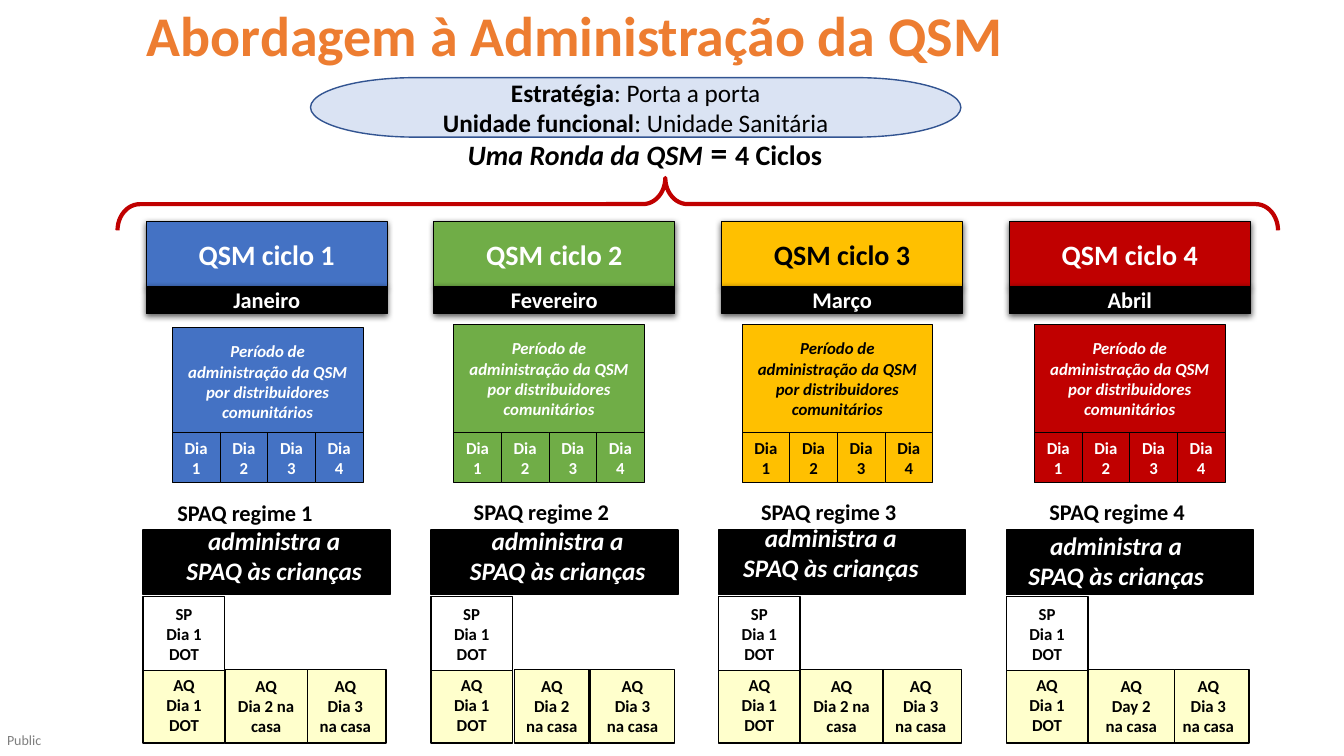
from lxml import etree
from pptx import Presentation
from pptx.dml.color import RGBColor
from pptx.enum.shapes import MSO_SHAPE
from pptx.enum.text import MSO_ANCHOR, PP_ALIGN
from pptx.oxml.ns import qn
from pptx.util import Inches, Pt

RECT, BRACE, TERMINATOR = (
    MSO_SHAPE.RECTANGLE, MSO_SHAPE.LEFT_BRACE, MSO_SHAPE.FLOWCHART_TERMINATOR)
TOP, MIDDLE = MSO_ANCHOR.TOP, MSO_ANCHOR.MIDDLE
LEFT, CENTER = PP_ALIGN.LEFT, PP_ALIGN.CENTER

THEME = {
    "font": "Calibri",
    "color": {"black": "000000", "white": "FFFFFF", "orange": "ED7D31",
              "blue": "4472C4", "green": "70AD47", "gold": "FFC000",
              "red": "C00000", "cream": "FFFFCC", "pale": "DAE3F3",
              "navy": "325491", "gray": "7F7F7F"},
    "size": {"title": 40, "equals": 24, "cycle": 20, "strategy": 18,
             "month": 16, "cell": 12, "label": 10},
}

# Content
TITLE = "Abordagem à Administração da QSM"
STRATEGY = [("Estratégia", ": Porta a porta"),
            ("Unidade funcional", ": Unidade Sanitária")]
PERIOD = "Período de administração da QSM por distribuidores comunitários"
DAYS = ["Dia 1", "Dia 2", "Dia 3", "Dia 4"]
GIVES = "administra a SPAQ às crianças"
SP_DOSE = ["SP", "Dia 1", "DOT"]
AQ_FIRST = ["AQ", "Dia 1", "DOT"]
AQ_SECOND = ["AQ", "Dia 2 na casa"]
AQ_SECOND_SPLIT = ["AQ", "Day 2", "na casa"]
AQ_THIRD = ["AQ", "Dia 3", "na casa"]

# Second and third are the (offset, width) of the AQ boxes in their column
USUAL_SECOND, USUAL_THIRD = (0.81, 0.82), (1.6, 0.81)
CYCLES = [
    dict(month="Janeiro", fill="blue", ink="white", period=(1.71, 3.25),
         regime=(1.66, 4.9), gives=(1.71, 5.16), dose=AQ_SECOND,
         second=USUAL_SECOND, third=USUAL_THIRD),
    dict(month="Fevereiro", fill="green", ink="white", period=(4.5, 3.22),
         regime=(4.6, 4.89), gives=(4.52, 5.16), dose=AQ_SECOND,
         second=(0.83, 0.74), third=(1.58, 0.84)),
    dict(month="Março", fill="gold", ink="black", period=(7.36, 3.22),
         regime=(7.45, 4.89), gives=(7.23, 5.13), dose=AQ_SECOND,
         second=USUAL_SECOND, third=USUAL_THIRD),
    dict(month="Abril", fill="red", ink="white", period=(10.26, 3.22),
         regime=(10.31, 4.89), gives=(10.06, 5.21), dose=AQ_SECOND_SPLIT,
         second=(0.81, 0.86), third=USUAL_THIRD),
]

# Column grid
FIRST_LEFT, COLUMN_STEP = 1.42, 8.56 / 3
HEAD_INSET, HEAD_WIDTH = 0.03, 2.39
PERIOD_WIDTH, DAY_TOP = 1.89, 4.29
DOSE_WIDTH, DOSE_HEIGHT, SP_TOP, AQ_TOP = 0.81, 0.73, 5.92, 6.64

deck = Presentation()
deck.slide_width, deck.slide_height = Inches(13.33), Inches(7.5)
page = deck.slides.add_slide(deck.slide_layouts[6])


def color(name):
    return RGBColor.from_string(THEME["color"][name])


def write(box, lines, size, ink, align=CENTER, anchor=MIDDLE, **base):
    """Each line is a string or a list of (text, format) spans."""
    frame = box.text_frame
    frame.word_wrap, frame.vertical_anchor = True, anchor
    for number, line in enumerate(lines):
        para = frame.paragraphs[0] if number == 0 else frame.add_paragraph()
        para.alignment = align
        for text, changes in [(line, {})] if isinstance(line, str) else line:
            span = para.add_run()
            span.text = text
            values = {"name": THEME["font"], "size": size, "bold": True,
                      **base, **changes}
            values["size"] = Pt(THEME["size"][values["size"]])
            for key, value in values.items():
                setattr(span.font, key, value)
            span.font.color.rgb = color(ink)


def add_box(at, fill, line="black", weight=1, kind=RECT):
    box = page.shapes.add_shape(kind, *map(Inches, at))
    box.shadow.inherit = False
    if fill:
        box.fill.solid()
        box.fill.fore_color.rgb = color(fill)
    else:
        box.fill.background()
    box.line.color.rgb = color(line)
    box.line.width = Pt(weight)
    return box


def add_text(at, lines, size, ink="black", align=LEFT, **base):
    box = page.shapes.add_textbox(*map(Inches, at))
    write(box, lines, size, ink, align, TOP, **base)
    return box


def cast_shadow(box):
    effects = box._element.spPr.find(qn("a:effectLst"))
    shadow = etree.SubElement(
        effects, qn("a:outerShdw"), blurRad=str(Pt(4.5)), dist=str(Pt(1.5)),
        dir="5400000", algn="ctr", rotWithShape="0")
    tint = etree.SubElement(shadow, qn("a:srgbClr"),
                            val=THEME["color"]["black"])
    etree.SubElement(tint, qn("a:alpha"), val="63000")


def add_cycle(number, cycle):
    left = FIRST_LEFT + (number - 1) * COLUMN_STEP
    fill, ink = cycle["fill"], cycle["ink"]

    # Cycle and month headings
    for text, top, height, back, front, size in [
            (f"QSM ciclo {number}", 2.2, 0.64, fill, ink, "cycle"),
            (cycle["month"], 2.84, 0.27, "black", "white", "month")]:
        head = add_box((left + HEAD_INSET, top, HEAD_WIDTH, height), back,
                       weight=0.75)
        cast_shadow(head)
        write(head, [text], size, front)

    # Period and its days
    period_left, period_top = cycle["period"]
    period = add_box((period_left, period_top, PERIOD_WIDTH, 1.07), fill,
                     weight=0.5)
    write(period, [PERIOD], "cell", ink, italic=True)
    day_width = PERIOD_WIDTH / len(DAYS)
    for index, day in enumerate(DAYS):
        box = add_box((period_left + index * day_width, DAY_TOP, day_width,
                       0.5), fill, weight=0.5)
        write(box, [day], "cell", ink)

    # Regime and who gives it
    add_text((*cycle["regime"], 2.28, 0.36), [f"SPAQ regime {number}"],
             "month")
    add_box((left, 5.26, 2.45, 0.64), "black")
    add_text((*cycle["gives"], 2.02, 0.57), [GIVES], "strategy", "white",
             CENTER, italic=True)

    # Doses
    for lines, (offset, width), top, back, anchor in [
            (AQ_THIRD, cycle["third"], AQ_TOP, "cream", MIDDLE),
            (cycle["dose"], cycle["second"], AQ_TOP, "cream", MIDDLE),
            (AQ_FIRST, (0, DOSE_WIDTH), AQ_TOP, "cream", TOP),
            (SP_DOSE, (0, DOSE_WIDTH), SP_TOP, "white", MIDDLE)]:
        box = add_box((left + offset, top, width, DOSE_HEIGHT), back)
        write(box, lines, "cell", "black", anchor=anchor)


# Brace over the four cycles, turned so its tip points up
brace = add_box((6.66, -3.73, 0.52, 11.51), None, "red", 3, BRACE)
brace.rotation = 90
brace.adjustments[0], brace.adjustments[1] = 0.426, 0.528

# Round
add_text((4.54, 1.26, 5.66, 0.5), [[
    ("Uma Ronda da QSM", {"italic": True}),
    (" ", {"size": "equals", "italic": True}),
    ("= ", {"size": "equals"}),
    ("4 Ciclos", {})]], "cycle")

# Cycle columns
for position, entry in enumerate(CYCLES, 1):
    add_cycle(position, entry)

# Strategy
strategy = add_box((3.08, 0.77, 6.45, 0.59), "pale", "navy", kind=TERMINATOR)
write(strategy, [[(name, {}), (value, {"bold": False})]
                 for name, value in STRATEGY], "strategy", "black")

# Title and page label
title = add_text((0.86, -0.04, 12.3, 0.77), [TITLE], "title", "orange")
title.text_frame.paragraphs[0]._p.get_or_add_pPr().set(
    "marL", str(Inches(0.5)))
label = add_text((0.07, 7.26, 0.37, 0.17), ["Public"], "label", "gray",
                 bold=False)
for side in ("left", "top", "right", "bottom"):
    setattr(label.text_frame, f"margin_{side}", 0)

deck.save("out.pptx")
